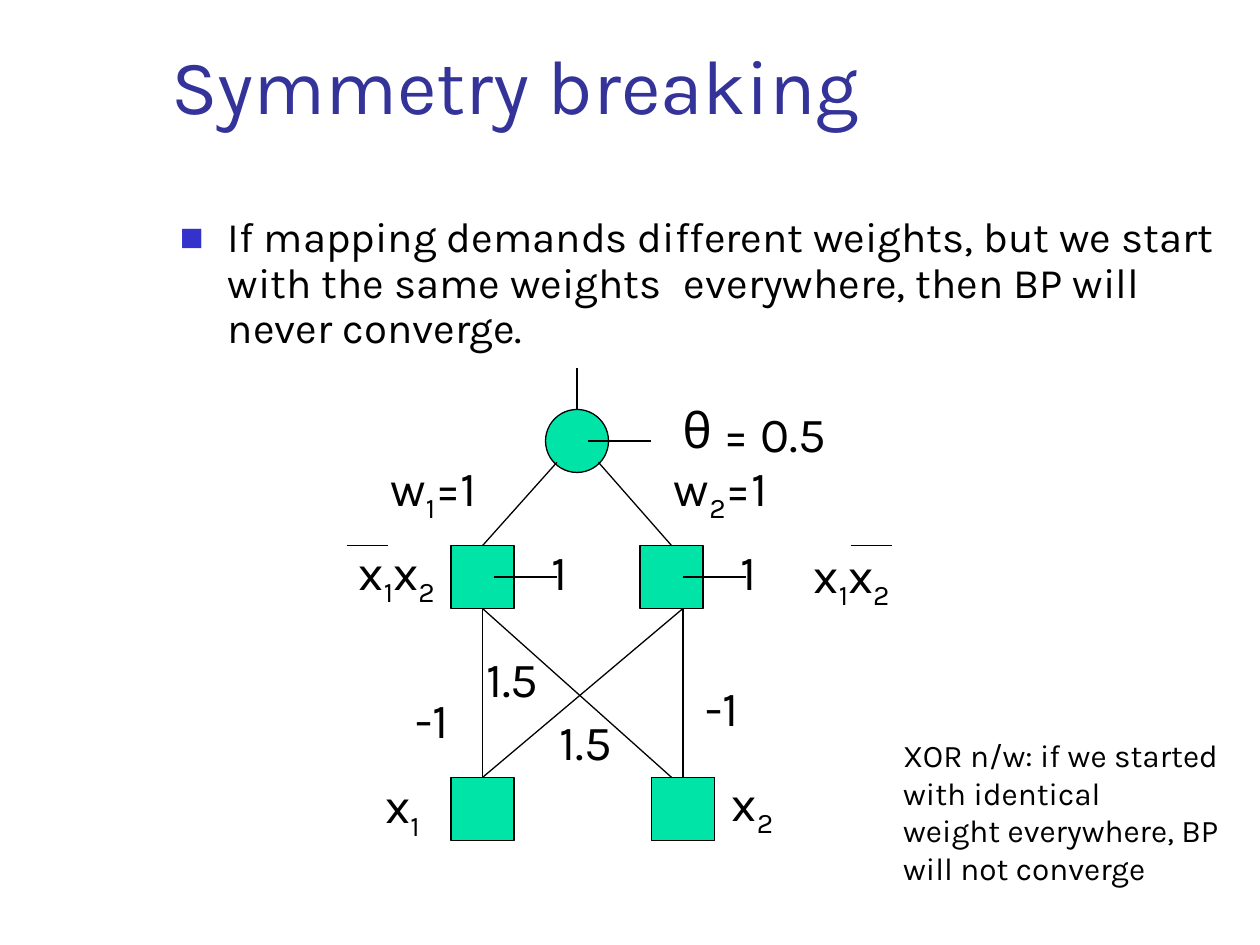
from typing import NamedTuple, Optional

from lxml import etree
from pptx import Presentation
from pptx.dml.color import RGBColor
from pptx.enum.shapes import MSO_CONNECTOR, MSO_SHAPE
from pptx.enum.text import MSO_ANCHOR, MSO_AUTO_SIZE
from pptx.oxml.ns import qn
from pptx.util import Inches, Pt

FONT = "Karla"
BLACK, GREEN, TITLE_BLUE, BULLET_BLUE = "000000", "00E4A8", "333399", "3333CC"
NODE_SIZE = 0.5
HIDDEN_Y, INPUT_Y = 4.33, 6.17
TOP, BOTTOM = 0, 2


class Node(NamedTuple):
    name: str
    x: float
    y: float
    kind: MSO_SHAPE = MSO_SHAPE.RECTANGLE


class Joint(NamedTuple):
    node: str
    site: int


class Edge(NamedTuple):
    start: tuple[float, float]
    end: tuple[float, float]
    begin_joint: Optional[Joint] = None
    end_joint: Optional[Joint] = None


class Label(NamedTuple):
    """Texts alternate between normal and subscript."""
    x: float
    y: float
    w: float
    texts: tuple[str, ...]
    wrap: bool = False
    bullet: str = ""


NODES = [
    Node("output", 4.33, 3.25, MSO_SHAPE.OVAL),
    Node("hidden 1", 3.58, HIDDEN_Y),
    Node("hidden 2", 5.08, HIDDEN_Y),
    Node("input 1", 3.58, INPUT_Y),
    Node("input 2", 5.17, INPUT_Y),
]

EDGES = [
    # Weights into the output node, and its output
    Edge((3.83, 4.33), (4.42, 3.67), Joint("hidden 1", TOP)),
    Edge((4.75, 3.67), (5.33, 4.33), None, Joint("hidden 2", TOP)),
    Edge((4.58, 2.92), (4.58, 3.25), None, Joint("output", TOP)),
    # Weights from the inputs to the hidden layer
    Edge((3.83, 6.17), (5.42, 4.83), Joint("input 1", TOP)),
    Edge((3.83, 4.83), (5.33, 6.17), Joint("hidden 1", BOTTOM)),
    Edge((3.83, 4.83), (3.83, 6.17), Joint("hidden 1", BOTTOM), Joint("input 1", TOP)),
    Edge((5.42, 4.83), (5.42, 6.17), None, Joint("input 2", TOP)),
    # Threshold ticks
    Edge((4.67, 3.5), (5.17, 3.5)),
    Edge((3.92, 4.58), (4.42, 4.58)),
    Edge((5.42, 4.58), (5.92, 4.58)),
    # Negation bars
    Edge((2.75, 4.33), (3.08, 4.33)),
    Edge((6.75, 4.33), (7.08, 4.33)),
]

LABELS = [
    Label(5.25, 3.58, 1.07, ("w", "2", "=1")),
    Label(3, 3.58, 1.07, ("w", "1", "=1")),
    Label(5.32, 3.15, 1.4, (" = 0.5",), bullet="θ"),
    Label(2.75, 4.25, 0.89, ("x", "1", "x", "2")),
    Label(6.36, 4.27, 0.89, ("x", "1", "x", "2")),
    Label(3.2, 5.42, 0.55, ("-1",)),
    Label(5.5, 5.33, 0.55, ("-1",)),
    Label(2.96, 6.1, 0.54, ("x", "1")),
    Label(5.71, 6.08, 0.54, ("x", "2")),
    Label(3.76, 5.1, 0.74, ("1.5",)),
    Label(4.34, 5.6, 0.74, ("1.5",)),
    Label(4.28, 4.25, 0.55, ("1",), wrap=True),
    Label(5.78, 4.25, 0.55, ("1",), wrap=True),
]


def rgb(color: str) -> RGBColor:
    return RGBColor.from_string(color)


def add_box(s, x: float, y: float, w: float, h: float, wrap=True, grow=False):
    """Add a text box and return its text frame."""
    tf = s.shapes.add_textbox(Inches(x), Inches(y), Inches(w), Inches(h)).text_frame
    tf.word_wrap = wrap
    tf.auto_size = MSO_AUTO_SIZE.SHAPE_TO_FIT_TEXT if grow else MSO_AUTO_SIZE.NONE
    return tf


def add_run(p, text: str, size: float, color: str = BLACK, subscript=False) -> None:
    r = p.add_run()
    r.text = text
    r.font.name, r.font.size = FONT, Pt(size)
    r.font.color.rgb = rgb(color)
    if subscript:
        r._r.get_or_add_rPr().set("baseline", "-25000")


def set_bullet(p, char: str, color: str, percent: int = 100, indent: float = 0) -> None:
    pPr = p._p.get_or_add_pPr()
    pPr.set("marL", str(Inches(indent)))
    pPr.set("indent", str(-Inches(indent)))
    clr = etree.SubElement(pPr, qn("a:buClr"))
    etree.SubElement(clr, qn("a:srgbClr"), val=color)
    etree.SubElement(pPr, qn("a:buSzPct"), val=str(percent * 1000))
    etree.SubElement(pPr, qn("a:buFont"), typeface=FONT)
    etree.SubElement(pPr, qn("a:buChar"), char=char)


def add_node(s, node: Node):
    sp = s.shapes.add_shape(node.kind, Inches(node.x), Inches(node.y),
                            Inches(NODE_SIZE), Inches(NODE_SIZE))
    sp.shadow.inherit = False
    sp.fill.solid()
    sp.fill.fore_color.rgb = rgb(GREEN)
    sp.line.color.rgb = rgb(BLACK)
    sp.line.width = Pt(0.75)
    return sp


def add_edge(s, edge: Edge, nodes: dict) -> None:
    ends = [Inches(v) for v in (*edge.start, *edge.end)]
    line = s.shapes.add_connector(MSO_CONNECTOR.STRAIGHT, *ends)
    if edge.begin_joint:
        line.begin_connect(nodes[edge.begin_joint.node], edge.begin_joint.site)
    if edge.end_joint:
        line.end_connect(nodes[edge.end_joint.node], edge.end_joint.site)
    line.line.color.rgb = rgb(BLACK)
    line.line.width = Pt(0.75)
    etree.SubElement(line._element.spPr, qn("a:effectLst"))


def add_label(s, label: Label) -> None:
    p = add_box(s, label.x, label.y, label.w, 0.57, label.wrap, grow=True).paragraphs[0]
    if label.bullet:
        set_bullet(p, label.bullet, BLACK)
    for i, text in enumerate(label.texts):
        add_run(p, text, 28, subscript=i % 2 == 1)


def main() -> None:
    prs = Presentation()
    prs.slide_width, prs.slide_height = Inches(10), Inches(7.5)
    s = prs.slides.add_slide(prs.slide_layouts[6])

    tf = add_box(s, 1.26, 0.23, 8.52, 0.85)
    tf.vertical_anchor = MSO_ANCHOR.BOTTOM
    add_run(tf.paragraphs[0], "Symmetry breaking", 44, TITLE_BLUE)

    p = add_box(s, 1.33, 1.67, 8.5, 4.5).paragraphs[0]
    p.line_spacing, p.space_before = 0.9, Pt(5)
    set_bullet(p, "■", BULLET_BLUE, 60, 0.38)
    add_run(p, "If mapping demands different weights, but we start with the same "
               "weights \teverywhere, then BP will never converge.", 24)

    nodes = {node.name: add_node(s, node) for node in NODES}
    for edge in EDGES:
        add_edge(s, edge, nodes)
    for label in LABELS:
        add_label(s, label)

    tf = add_box(s, 7.07, 5.79, 2.83, 1.31, wrap=False, grow=True)
    note = ["XOR n/w: if we started", "with identical",
            "weight everywhere, BP", "will not converge"]
    for i, text in enumerate(note):
        add_run(tf.add_paragraph() if i else tf.paragraphs[0], text, 18)

    prs.save("out.pptx")


if __name__ == "__main__":
    main()
